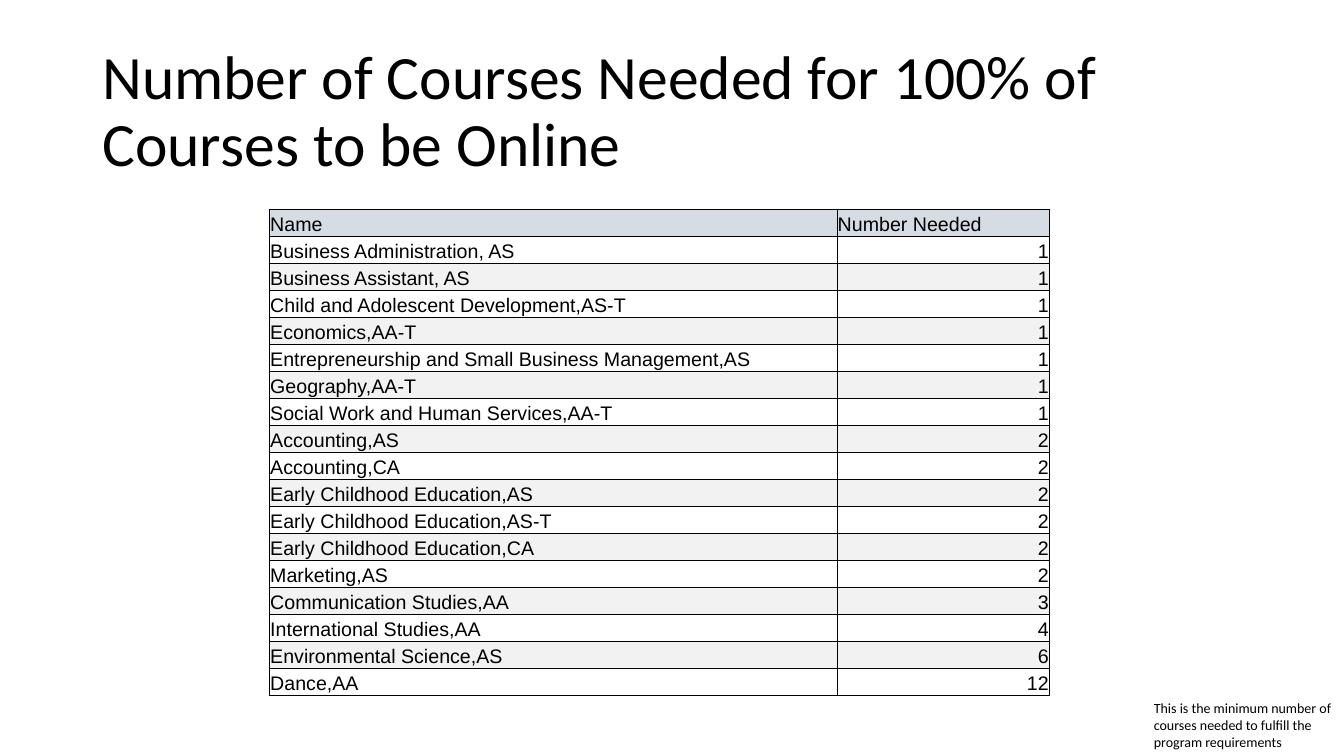
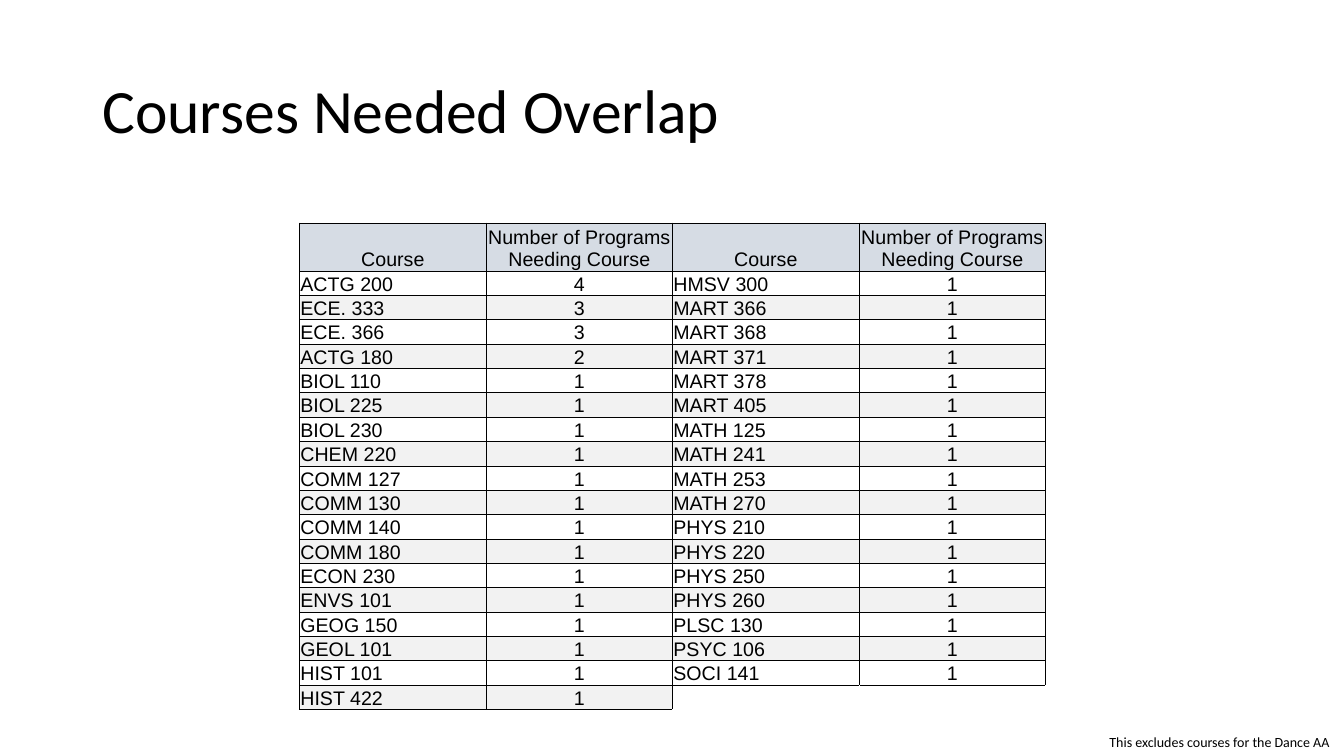
from dataclasses import dataclass
from itertools import zip_longest

import pptx
import pptx.dml.color
import pptx.enum.text
import pptx.util
from lxml import etree

Cm = pptx.util.Cm
Pt = pptx.util.Pt
Align = pptx.enum.text.PP_ALIGN
Anchor = pptx.enum.text.MSO_ANCHOR
A = "{http://schemas.openxmlformats.org/drawingml/2006/main}"


@dataclass(frozen=True)
class Theme:
    ink: str = "000000"
    header_fill: str = "D6DCE4"
    band_fill: str = "F2F2F2"
    text_font: str = "Calibri"
    table_font: str = "Arial"
    title_size: int = 44
    table_size: int = 14
    note_size: int = 10
    border_width: float = 0.5
    cell_margin: float = 0.02


class Deck:
    def __init__(self, theme):
        self.theme = theme
        self.presentation = pptx.Presentation()
        self.presentation.slide_width = Cm(33.87)
        self.presentation.slide_height = Cm(19.05)
        self.slide = None

    def new_slide(self, title):
        self.slide = self.presentation.slides.add_slide(self.presentation.slide_layouts[6])
        frame = self.text_box(title, (2.33, 1.01, 29.21, 3.68), self.theme.title_size)
        frame.vertical_anchor = Anchor.MIDDLE
        frame.paragraphs[0].line_spacing = 0.9

    def add_text(self, paragraph, text, font, size):
        run = paragraph.add_run()
        run.text = text
        run.font.name = font
        run.font.size = Pt(size)
        run.font.color.rgb = pptx.dml.color.RGBColor.from_string(self.theme.ink)

    def text_box(self, text, box, size, wrap=True):
        frame = self.slide.shapes.add_textbox(*map(Cm, box)).text_frame
        frame.word_wrap = wrap
        self.add_text(frame.paragraphs[0], text, self.theme.text_font, size)
        return frame

    def note(self, text, box, wrap=True):
        self.text_box(text, box, self.theme.note_size, wrap)

    def border(self, cell, sides):
        """Draw the cell's sides, named by the letters L, R, T and B."""
        properties = cell._tc.get_or_add_tcPr()
        for side in sides:
            line = etree.SubElement(properties, f"{A}ln{side}", w=str(Pt(self.theme.border_width)))
            fill = etree.SubElement(line, f"{A}solidFill")
            etree.SubElement(fill, f"{A}srgbClr", val=self.theme.ink)

    def fill_cell(self, cell, row):
        if row % 2 == 0:
            colour = self.theme.band_fill if row else self.theme.header_fill
            cell.fill.solid()
            cell.fill.fore_color.rgb = pptx.dml.color.RGBColor.from_string(colour)
        else:
            cell.fill.background()

    def table(self, rows, left, top, widths, heights, header_aligns, body_aligns):
        """Heights are those of the header and of each body row; a None value leaves a cell open."""
        header_height, body_height = heights
        total_height = header_height + body_height * (len(rows) - 1)
        table = self.slide.shapes.add_table(
            len(rows), len(widths), Cm(left), Cm(top), Cm(sum(widths)), Cm(total_height)).table
        table.first_row = table.horz_banding = False
        for column, width in zip(table.columns, widths):
            column.width = Cm(width)
        for r, values in enumerate(rows):
            table.rows[r].height = Cm(body_height if r else header_height)
            aligns = body_aligns if r else header_aligns
            for c, value in enumerate(values):
                cell = table.cell(r, c)
                cell.vertical_anchor = Anchor.BOTTOM
                cell.margin_left = cell.margin_right = cell.margin_top = Cm(self.theme.cell_margin)
                cell.margin_bottom = 0
                paragraph = cell.text_frame.paragraphs[0]
                if value is None:
                    follows_text = c > 0 and values[c - 1] is not None
                    self.border(cell, "LT" if follows_text else "T")
                    cell.fill.background()
                    # keeps the open cell from stretching its row
                    etree.SubElement(paragraph._p, f"{A}endParaRPr", sz=str(self.theme.note_size * 100))
                    continue
                self.border(cell, "LRTB")
                self.fill_cell(cell, r)
                paragraph.alignment = aligns[c]
                self.add_text(paragraph, str(value), self.theme.table_font, self.theme.table_size)


PROGRAMS = [
    ("Business Administration, AS", 1),
    ("Business Assistant, AS", 1),
    ("Child and Adolescent Development,AS-T", 1),
    ("Economics,AA-T", 1),
    ("Entrepreneurship and Small Business Management,AS", 1),
    ("Geography,AA-T", 1),
    ("Social Work and Human Services,AA-T", 1),
    ("Accounting,AS", 2),
    ("Accounting,CA", 2),
    ("Early Childhood Education,AS", 2),
    ("Early Childhood Education,AS-T", 2),
    ("Early Childhood Education,CA", 2),
    ("Marketing,AS", 2),
    ("Communication Studies,AA", 3),
    ("International Studies,AA", 4),
    ("Environmental Science,AS", 6),
    ("Dance,AA", 12),
]

SHARED_COURSES = [("ACTG 200", 4), ("ECE. 333", 3), ("ECE. 366", 3), ("ACTG 180", 2)]
FIRST_SINGLE_COURSES = [
    "BIOL 110", "BIOL 225", "BIOL 230", "CHEM 220", "COMM 127", "COMM 130", "COMM 140",
    "COMM 180", "ECON 230", "ENVS 101", "GEOG 150", "GEOL 101", "HIST 101", "HIST 422",
]
LAST_SINGLE_COURSES = [
    "HMSV 300", "MART 366", "MART 368", "MART 371", "MART 378", "MART 405", "MATH 125",
    "MATH 241", "MATH 253", "MATH 270", "PHYS 210", "PHYS 220", "PHYS 250", "PHYS 260",
    "PLSC 130", "PSYC 106", "SOCI 141",
]


def needed_slide(deck):
    deck.new_slide("Number of Courses Needed for 100% of Courses to be Online")
    deck.table([("Name", "Number Needed")] + PROGRAMS, 6.79, 5.27, (14.3, 5.36), (0.68, 0.68),
               (Align.LEFT, Align.LEFT), (Align.LEFT, Align.RIGHT))
    deck.note("This is the minimum number of courses needed to fulfill the program requirements",
              (28.83, 17.5, 5.05, 1.55))


def overlap_slide(deck):
    deck.new_slide("Courses Needed Overlap")
    left_half = SHARED_COURSES + [(course, 1) for course in FIRST_SINGLE_COURSES]
    right_half = [(course, 1) for course in LAST_SINGLE_COURSES]
    body = [left + right for left, right in
            zip_longest(left_half, right_half, fillvalue=(None, None))]
    header = ("Course", "Number of Programs Needing Course") * 2
    deck.table([header] + body, 7.55, 5.62, (4.7,) * 4, (1.14, 0.57),
               (Align.CENTER,) * 4, (Align.LEFT, Align.CENTER) * 2)
    deck.note("This excludes courses for the Dance AA", (27.71, 18.36, 6.15, 0.69), wrap=False)


def main():
    deck = Deck(Theme())
    needed_slide(deck)
    overlap_slide(deck)
    deck.presentation.save("out.pptx")


if __name__ == "__main__":
    main()
